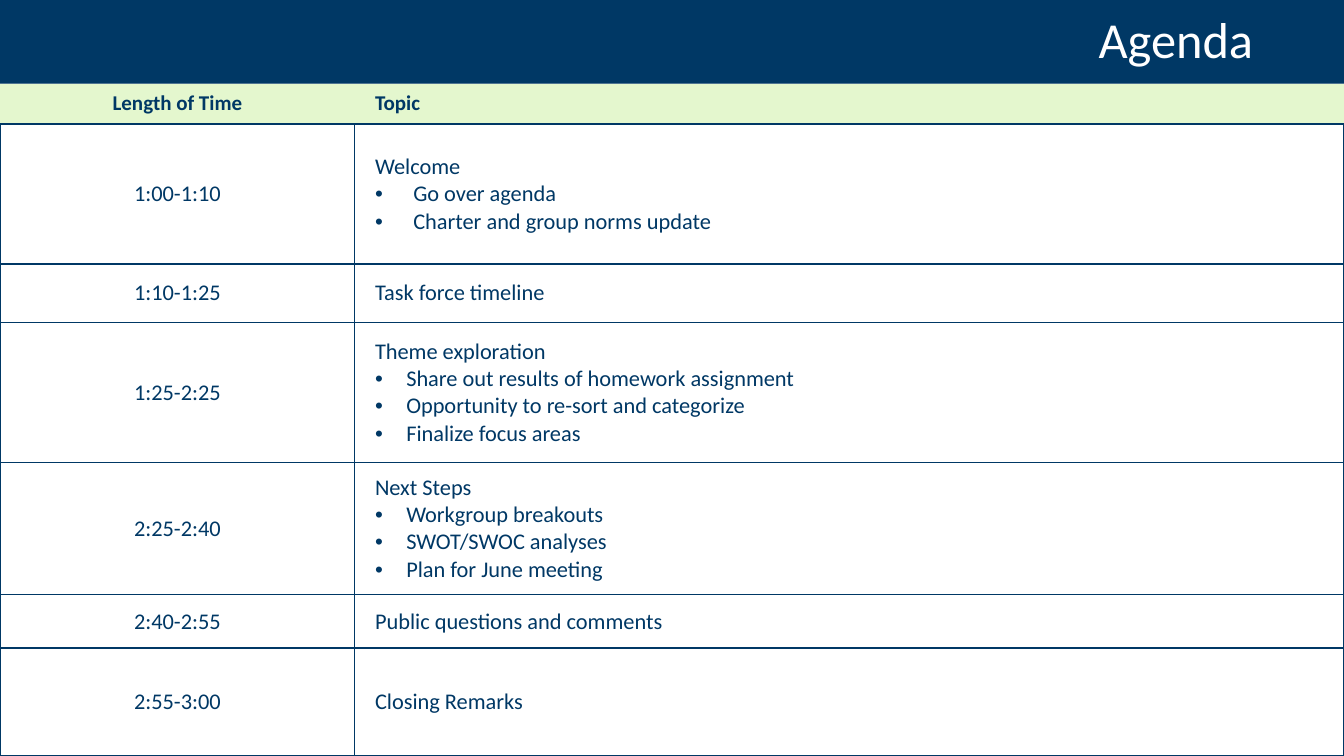
from lxml.etree import SubElement
from pptx import Presentation
from pptx.dml.color import RGBColor
from pptx.enum.shapes import MSO_SHAPE as Preset
from pptx.enum.text import MSO_ANCHOR as Anchor, PP_ALIGN as Align
from pptx.oxml.ns import qn
from pptx.util import Inches, Pt

NAVY = RGBColor(0x00, 0x38, 0x65)
PALE_GREEN = RGBColor(0xE4, 0xF7, 0xCE)
GRAY = RGBColor(0xE8, 0xE8, 0xE8)
WHITE = RGBColor(0xFF, 0xFF, 0xFF)
FONT = "Calibri"

SLIDE_W, SLIDE_H, TITLE_H = 13.33, 7.5, 0.83
COLUMN_WIDTHS = (3.52, 9.81)
HEADER_H = 0.4
HEADINGS = ("Length of Time", "Topic")

# Row height, time, topic, bullet indent, bullet points
AGENDA = [
    (1.39, "1:00-1:10", "Welcome", 0.38,
     ["Go over agenda", "Charter and group norms update"]),
    (0.58, "1:10-1:25", "Task force timeline", 0, []),
    (1.39, "1:25-2:25", "Theme exploration", 0.31,
     ["Share out results of homework assignment",
      "Opportunity to re-sort and categorize", "Finalize focus areas"]),
    (1.31, "2:25-2:40", "Next Steps", 0.31,
     ["Workgroup breakouts", "SWOT/SWOC analyses", "Plan for June meeting"]),
    (0.53, "2:40-2:55", "Public questions and comments", 0, []),
    (1.07, "2:55-3:00", "Closing Remarks", 0, []),
]


def style_text(paragraph, size, color, align, bold=False):
    paragraph.alignment = align
    for run in paragraph.runs:
        run.font.name = FONT
        run.font.size = Pt(size)
        run.font.bold = bold
        run.font.color.rgb = color


def add_bullet(paragraph, indent):
    properties = paragraph._p.get_or_add_pPr()
    properties.set("marL", str(Inches(indent)))
    properties.set("indent", str(-Inches(indent)))
    SubElement(properties, qn("a:buFont"), typeface="Arial")
    SubElement(properties, qn("a:buChar"), char="•")


def set_borders(cell, visible_sides):
    properties = cell._tc.get_or_add_tcPr()
    for side in "LRTB":
        line = SubElement(properties, qn(f"a:ln{side}"), w=str(Pt(1)))
        if side in visible_sides:
            fill = SubElement(line, qn("a:solidFill"))
            SubElement(fill, qn("a:srgbClr"), val=str(NAVY))
        else:
            SubElement(line, qn("a:noFill"))


def fill_cell(cell, lines, column, indent=0, header=False):
    set_borders(cell, "B" if header else "LRTB")
    cell.fill.solid()
    cell.fill.fore_color.rgb = PALE_GREEN if header else WHITE
    cell.vertical_anchor = Anchor.MIDDLE
    cell.margin_left = Inches((0.1, 0.2)[column])
    cell.margin_right = Inches(0.1)
    cell.margin_top = cell.margin_bottom = Inches(0.05 if header else 0.1)
    cell.text_frame.text = "\n".join(lines)
    for number, paragraph in enumerate(cell.text_frame.paragraphs):
        style_text(paragraph, 15 if header else 16, NAVY,
                   (Align.CENTER, Align.LEFT)[column], header)
        if number:
            add_bullet(paragraph, indent)


def add_title_band(slide, left, top, width, height):
    band = slide.shapes.add_shape(Preset.RECTANGLE, Inches(left), Inches(top),
                                  Inches(width), Inches(height))
    band.shadow.inherit = False
    band.fill.solid()
    band.fill.fore_color.rgb = NAVY
    band.line.fill.background()
    frame = band.text_frame
    frame.word_wrap = True
    frame.vertical_anchor = Anchor.MIDDLE
    frame.margin_left = frame.margin_right = Inches(0.9)
    frame.text = "Agenda"
    frame.paragraphs[0].line_spacing = 0.9
    style_text(frame.paragraphs[0], 36, WHITE, Align.RIGHT)


def add_agenda_table(slide, left, top, width, height):
    table = slide.shapes.add_table(
        len(AGENDA) + 1, len(HEADINGS), Inches(left), Inches(top),
        Inches(width), Inches(height)).table
    table.horz_banding = False
    for column, column_width in zip(table.columns, COLUMN_WIDTHS):
        column.width = Inches(column_width)

    # Header row
    table.rows[0].height = Inches(HEADER_H)
    for column, heading in enumerate(HEADINGS):
        fill_cell(table.cell(0, column), [heading], column, header=True)

    # Agenda items
    for row, (row_height, time, topic, indent, points) in enumerate(AGENDA, 1):
        table.rows[row].height = Inches(row_height)
        fill_cell(table.cell(row, 0), [time], 0)
        fill_cell(table.cell(row, 1), [topic, *points], 1, indent)


def main():
    deck = Presentation()
    deck.slide_width, deck.slide_height = Inches(SLIDE_W), Inches(SLIDE_H)
    slide = deck.slides.add_slide(deck.slide_layouts[6])
    slide.background.fill.solid()
    slide.background.fill.fore_color.rgb = GRAY
    add_title_band(slide, 0, 0, SLIDE_W, TITLE_H)
    add_agenda_table(slide, 0, TITLE_H, SLIDE_W, SLIDE_H - TITLE_H)
    deck.save("out.pptx")


if __name__ == "__main__":
    main()
